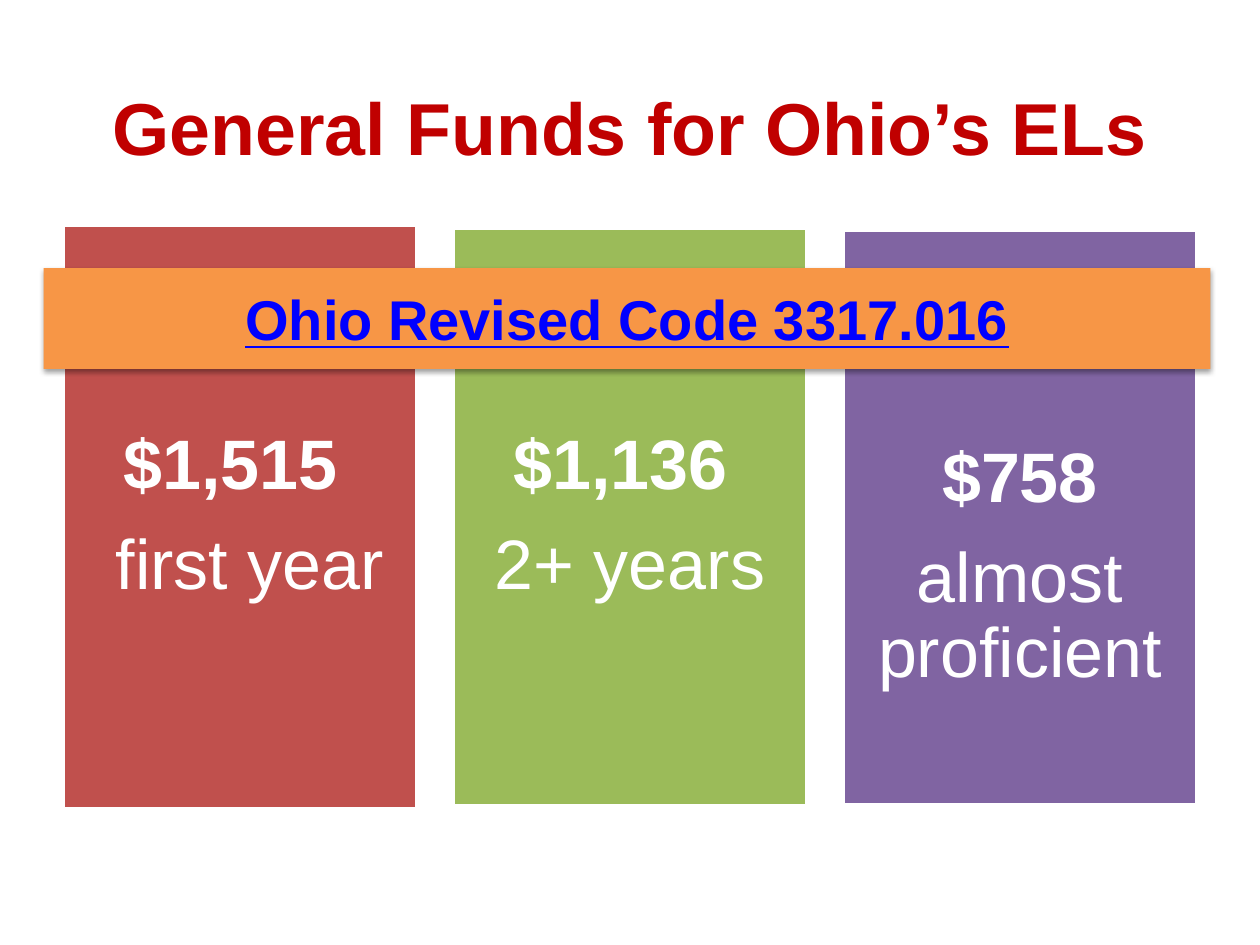
from lxml import etree
from pptx import Presentation
from pptx.dml.color import RGBColor
from pptx.enum import shapes, text
from pptx.oxml import ns
from pptx.util import Pt

DARK_RED = RGBColor(0xC0, 0x00, 0x00)
RED = RGBColor(0xC0, 0x50, 0x4D)
GREEN = RGBColor(0x9B, 0xBB, 0x59)
PURPLE = RGBColor(0x80, 0x64, 0xA2)
ORANGE = RGBColor(0xF7, 0x96, 0x46)
BLUE = RGBColor(0x00, 0x00, 0xFF)
WHITE = RGBColor(0xFF, 0xFF, 0xFF)

FUNDS = [
    (RED, 333.4, 12, "$1,515 ", " first year"),
    (GREEN, 329.8, 12, "$1,136 ", "2+ years"),
    (PURPLE, 328.3, 69.4, "$758", "almost proficient"),
]


def style(p, size, color, bold=True):
    p.alignment = text.PP_ALIGN.CENTER
    p.font.name = "Arial"
    p.font.size = Pt(size)
    p.font.bold = bold
    p.font.color.rgb = color


def set_margins(tf, side, top):
    tf.margin_left = tf.margin_right = tf.margin_bottom = Pt(side)
    tf.margin_top = Pt(top)


def add_title(s, left, top, width, height):
    sp = s.shapes.add_textbox(Pt(left), Pt(top), Pt(width), Pt(height))
    tf = sp.text_frame
    tf.word_wrap = True
    tf.vertical_anchor = text.MSO_ANCHOR.BOTTOM
    set_margins(tf, 0, 0)
    tf.text = "General Funds for Ohio’s ELs"
    style(tf.paragraphs[0], 42, DARK_RED)


def add_rect(s, left, top, width, height, fill):
    sp = s.shapes.add_shape(shapes.MSO_SHAPE.RECTANGLE,
                            Pt(left), Pt(top), Pt(width), Pt(height))
    sp.shadow.inherit = False
    sp.fill.solid()
    sp.fill.fore_color.rgb = fill
    sp.text_frame.word_wrap = True
    sp.text_frame.vertical_anchor = text.MSO_ANCHOR.MIDDLE
    return sp


def add_fund_card(s, left, top, width, height, fill, inset, amount, stage):
    sp = add_rect(s, left, top, width, height, fill)
    sp.line.color.rgb = WHITE
    sp.line.width = Pt(2)
    tf = sp.text_frame
    set_margins(tf, 12, inset)
    tf.text = f"{amount}\n{stage}"
    for p, bold in zip(tf.paragraphs, (True, False)):
        style(p, 40, WHITE, bold)
        p.line_spacing = 0.9
        p.space_after = Pt(14)


def add_fund_cards(s, left, top, width, height, gap=20.5):
    card_width = (width - gap * (len(FUNDS) - 1)) / len(FUNDS)
    for i, (fill, card_height, *content) in enumerate(FUNDS):
        add_fund_card(s, left + i * (card_width + gap),
                      top + (height - card_height) / 2,
                      card_width, card_height, fill, *content)


def add_shadow(sp):
    effects = sp._element.spPr.find(ns.qn("a:effectLst"))
    shadow = etree.SubElement(
        effects, ns.qn("a:outerShdw"), blurRad=str(Pt(3.1)),
        dist=str(Pt(1.6)), dir="5400000", rotWithShape="0")
    color = etree.SubElement(shadow, ns.qn("a:srgbClr"), val="000000")
    etree.SubElement(color, ns.qn("a:alpha"), val="38000")


def add_code_band(s, left, top, width, height):
    sp = add_rect(s, left, top, width, height, ORANGE)
    sp.line.fill.background()
    add_shadow(sp)
    sp.text_frame.text = "Ohio Revised Code 3317.016"
    p = sp.text_frame.paragraphs[0]
    style(p, 32, BLUE)
    p.font.underline = True


def main():
    prs = Presentation()
    prs.slide_width, prs.slide_height = Pt(720), Pt(540)
    s = prs.slides.add_slide(prs.slide_layouts[6])
    add_title(s, 36, 46, 648, 51)
    add_fund_cards(s, 36, 128.8, 648, 333.4)
    add_code_band(s, 25, 153.2, 666.7, 57.6)
    prs.save("out.pptx")


if __name__ == "__main__":
    main()
